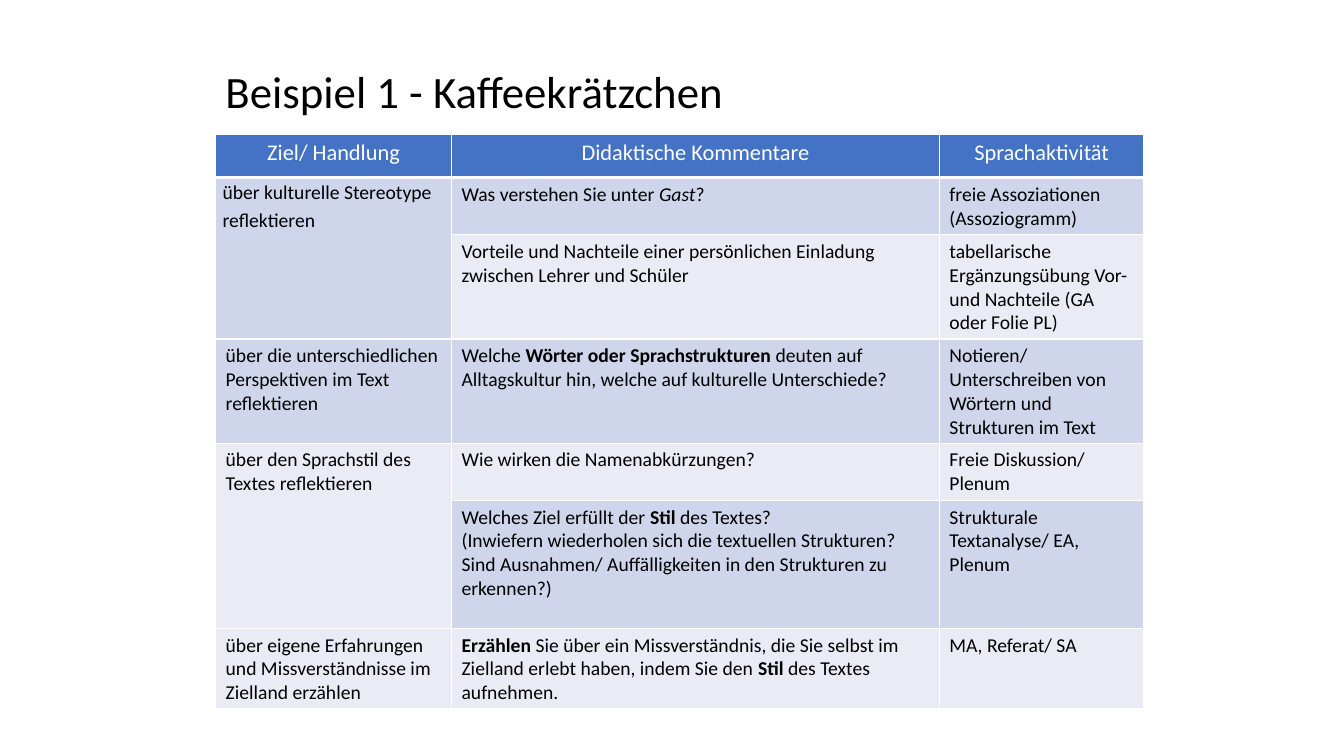
from dataclasses import dataclass
from typing import NamedTuple

from lxml.etree import SubElement
from pptx import Presentation
from pptx.dml.color import RGBColor as RGB
from pptx.enum.text import MSO_ANCHOR as Anchor, PP_ALIGN as Align
from pptx.oxml.ns import qn
from pptx.util import Pt

HUES = {"head": "4472C4", "dark": "CFD5EA", "light": "E9EBF5",
        "white": "FFFFFF", "black": "000000"}
FONT = "Calibri"
LEFT = 154
COLS = [168.5, 348.5, 146.2]
ROWS = [31, 24, 24, 48, 24, 91.4, 48]


class Bit(NamedTuple):
    text: str
    bold: bool = False
    slant: bool = False


@dataclass
class Entry:
    row: int
    col: int
    hue: str
    lines: list[list[Bit]]
    span: int = 1
    tight: bool = False


def plain(row: int, col: int, hue: str, text: str, span: int = 1,
          tight: bool = False) -> Entry:
    return Entry(row, col, hue, [[Bit(text)]], span, tight)


HEADS = ["Ziel/ Handlung", "Didaktische Kommentare", "Sprachaktivität"]
GOALS = [
    plain(1, 0, "dark", "über kulturelle Stereotype reflektieren", 2, True),
    plain(3, 0, "dark", "über die unterschiedlichen Perspektiven im Text reflektieren"),
    plain(4, 0, "light", "über den Sprachstil des Textes reflektieren", 2),
    plain(6, 0, "light", "über eigene Erfahrungen und Missverständnisse im Zielland erzählen"),
]
NOTES = [
    Entry(1, 1, "dark", [[Bit("Was verstehen Sie unter "), Bit("Gast", slant=True), Bit("?")]]),
    plain(2, 1, "light", "Vorteile und Nachteile einer persönlichen Einladung "
          "zwischen Lehrer und Schüler"),
    Entry(3, 1, "dark", [[Bit("Welche "), Bit("Wörter oder Sprachstrukturen", True),
                          Bit(" deuten auf Alltagskultur hin, welche auf "
                              "kulturelle Unterschiede?")]]),
    plain(4, 1, "light", "Wie wirken die Namenabkürzungen?"),
    Entry(5, 1, "dark", [
        [Bit("Welches Ziel erfüllt der "), Bit("Stil", True), Bit(" des Textes?")],
        [Bit("(Inwiefern wiederholen sich die textuellen Strukturen? Sind Ausnahmen/ "
             "Auffälligkeiten in den Strukturen zu erkennen?)")]]),
    Entry(6, 1, "light", [[Bit("Erzählen", True),
                           Bit(" Sie über ein Missverständnis, die Sie selbst im Zielland "
                               "erlebt haben, indem Sie den "),
                           Bit("Stil", True), Bit(" des Textes aufnehmen.")]]),
]
TASKS = [
    plain(1, 2, "dark", "freie Assoziationen (Assoziogramm)"),
    plain(2, 2, "light", "tabellarische Ergänzungsübung Vor- und Nachteile "
          "(GA oder Folie PL)"),
    plain(3, 2, "dark", "Notieren/ Unterschreiben von Wörtern und Strukturen im Text"),
    plain(4, 2, "light", "Freie Diskussion/ Plenum"),
    plain(5, 2, "dark", "Strukturale Textanalyse/ EA, Plenum"),
    plain(6, 2, "light", "MA, Referat/ SA"),
]


def style(para, size: float, hue: str) -> None:
    para.font.name = FONT
    para.font.size = Pt(size)
    para.font.color.rgb = RGB.from_string(HUES[hue])


def frame(cell, base: float) -> None:
    props = cell._tc.get_or_add_tcPr()
    for spot, side in enumerate("LRTB"):
        width = base if side == "B" else 1
        line = SubElement(props, qn(f"a:ln{side}"), w=str(Pt(width)))
        fill = SubElement(line, qn("a:solidFill"))
        SubElement(fill, qn("a:srgbClr"), val=HUES["white"])
        props.insert(spot, line)


def paint(cell, hue: str) -> None:
    cell.fill.solid()
    cell.fill.fore_color.rgb = RGB.from_string(HUES[hue])
    frame(cell, 3 if hue == "head" else 1)


def write(table, entry: Entry) -> None:
    head = entry.hue == "head"
    cell = table.cell(entry.row, entry.col)
    last = table.cell(entry.row + entry.span - 1, entry.col)
    if entry.span > 1:
        cell.merge(last)
        paint(last, entry.hue)
    paint(cell, entry.hue)
    if entry.tight:
        cell.margin_left = cell.margin_right = Pt(5)
        cell.margin_top = cell.margin_bottom = 0
    body = cell.text_frame
    for spot, bits in enumerate(entry.lines):
        para = body.add_paragraph() if spot else body.paragraphs[0]
        style(para, 16 if head else 14, "white" if head else "black")
        if head:
            para.alignment = Align.CENTER
        if entry.tight:
            para.line_spacing = 1.15
        for bit in bits:
            run = para.add_run()
            run.text = bit.text
            if bit.bold:
                run.font.bold = True
            if bit.slant:
                run.font.italic = True


def add_title(slide) -> None:
    box = slide.shapes.add_textbox(Pt(LEFT), Pt(50.4), Pt(648), Pt(33.8))
    body = box.text_frame
    body.word_wrap = True
    body.vertical_anchor = Anchor.MIDDLE
    para = body.paragraphs[0]
    para.text = "Beispiel 1 - Kaffeekrätzchen"
    para.line_spacing = 0.9
    style(para, 32, "black")


def add_plan(slide) -> None:
    shape = slide.shapes.add_table(len(ROWS), len(COLS), Pt(LEFT), Pt(95.8),
                                   Pt(sum(COLS)), Pt(sum(ROWS)))
    table = shape.table
    table.first_row = table.horz_banding = False
    for col, width in zip(table.columns, COLS):
        col.width = Pt(width)
    for row, height in zip(table.rows, ROWS):
        row.height = Pt(height)
    heads = [plain(0, col, "head", text) for col, text in enumerate(HEADS)]
    for entry in heads + GOALS + NOTES + TASKS:
        write(table, entry)
    shape.height = Pt(409.7)


def main() -> None:
    deck = Presentation()
    deck.slide_width, deck.slide_height = Pt(960), Pt(540)
    slide = deck.slides.add_slide(deck.slide_layouts[6])
    add_title(slide)
    add_plan(slide)
    deck.save("out.pptx")


if __name__ == "__main__":
    main()
